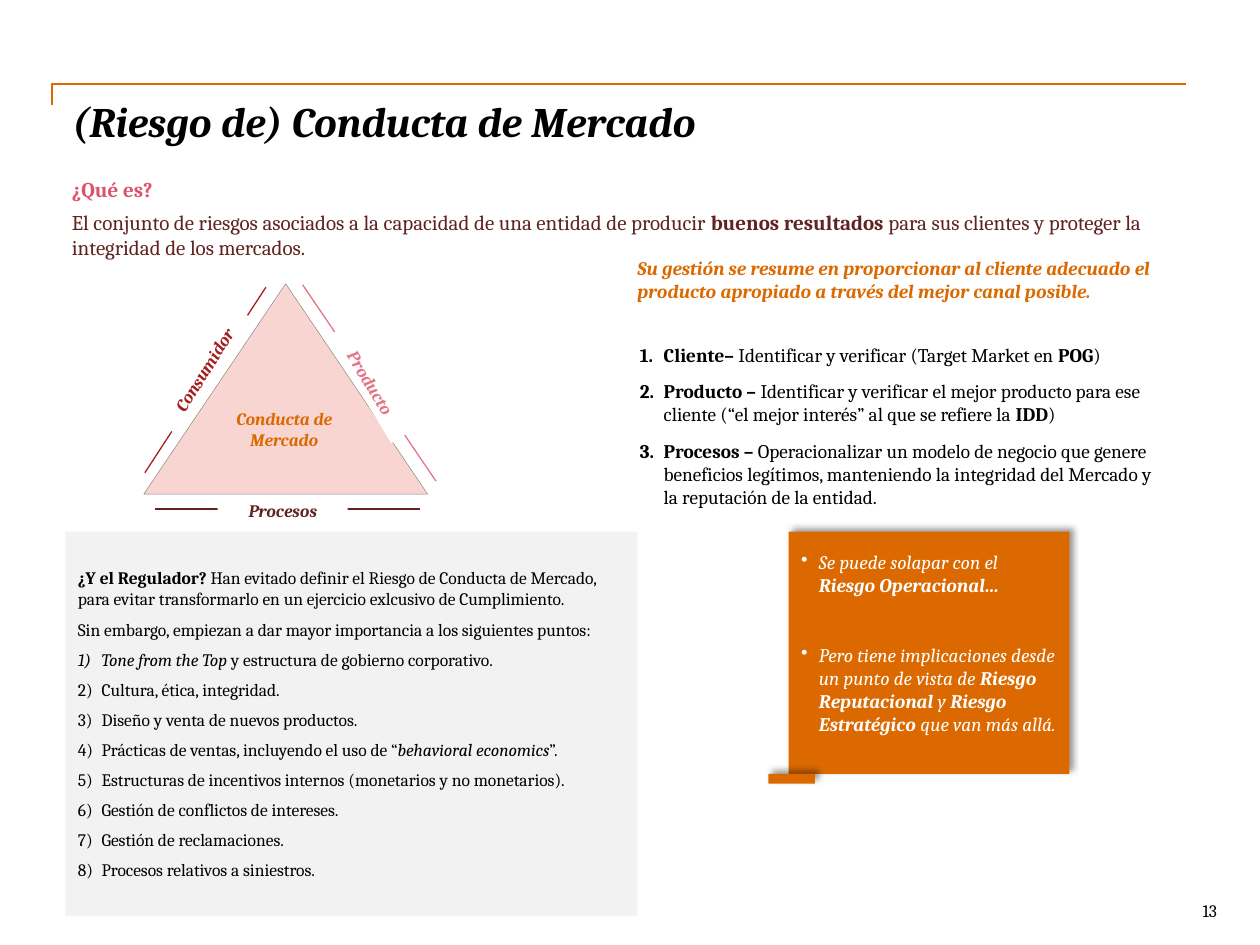
from lxml import etree
from pptx import Presentation
from pptx.dml.color import RGBColor
from pptx.enum.shapes import MSO_CONNECTOR, MSO_SHAPE
from pptx.enum.text import MSO_ANCHOR, PP_ALIGN
from pptx.oxml.ns import qn
from pptx.util import Cm, Pt

STRAIGHT, ELBOW = MSO_CONNECTOR.STRAIGHT, MSO_CONNECTOR.ELBOW
RECTANGLE, TRIANGLE = MSO_SHAPE.RECTANGLE, MSO_SHAPE.ISOSCELES_TRIANGLE
TOP, MIDDLE = MSO_ANCHOR.TOP, MSO_ANCHOR.MIDDLE
LEFT, CENTER, RIGHT = PP_ALIGN.LEFT, PP_ALIGN.CENTER, PP_ALIGN.RIGHT
FONT = "Cambria"
COLORS = {
    "orange": "DC6900", "black": "000000", "white": "FFFFFF", "grey": "808080",
    "panel": "F2F2F2", "blush": "F9D5D2", "brown": "602320", "pink": "E27588",
    "rose": "DB536A", "red": "A32020",
}
NUMBERING = {"1)": "arabicParenR", "1.": "arabicPeriod"}


def color(name):
    return RGBColor.from_string(COLORS[name])


def write(box, paras, size, ink, align=LEFT, anchor=TOP, margins=(0.25, 0.13, 0.25, 0.13),
          after=0, indent=0.48):
    frame = box.text_frame
    frame.word_wrap = True
    frame.vertical_anchor = anchor
    frame.margin_left, frame.margin_top, frame.margin_right, frame.margin_bottom = map(Cm, margins)
    for index, (marker, runs) in enumerate(paras):
        para = frame.paragraphs[0] if index == 0 else frame.add_paragraph()
        para.alignment = align
        para.space_after = Pt(after)
        for text, style in runs:
            span = para.add_run()
            span.text = text
            span.font.name = FONT
            span.font.size = Pt(size)
            span.font.bold = "b" in style
            span.font.italic = "i" in style
            span.font.color.rgb = color(ink)
        if marker:
            properties = para._p.get_or_add_pPr()
            properties.set("marL", str(Cm(indent)))
            properties.set("indent", str(-Cm(indent)))
            if marker in NUMBERING:
                etree.SubElement(properties, qn("a:buAutoNum"), type=NUMBERING[marker])
            else:
                etree.SubElement(properties, qn("a:buChar"), char=marker)


deck = Presentation()
deck.slide_width, deck.slide_height = Cm(25.4), Cm(19.05)
page = deck.slides.add_slide(deck.slide_layouts[6])
shapes = page.shapes

connectors = {}
for name, kind, ink, width, *ends in [
    ("frame", ELBOW, "orange", 1, 12.7, 13.34, 12.27, -9.52),
    ("Procesos", STRAIGHT, "brown", 0.75, 3.12, 10.26, 8.46, 10.26),
    ("Producto", STRAIGHT, "pink", 0.75, 6.1, 5.74, 8.79, 9.7),
    ("Consumidor", STRAIGHT, "red", 0.75, 2.92, 9.53, 5.36, 5.79),
]:
    connector = shapes.add_connector(kind, *map(Cm, ends))
    connector.line.color.rgb = color(ink)
    connector.line.width = Pt(width)
    etree.SubElement(connector._element.spPr, qn("a:effectLst"))
    connectors[name] = connector
frame_properties = connectors["frame"]._element.spPr
frame_properties.find(qn("a:xfrm")).set("rot", "5400000")
frame_properties.find(qn("a:prstGeom")).set("prst", "bentConnector2")

blocks = {}
for name, kind, fill, *place in [
    ("triangle", TRIANGLE, "blush", 2.9, 5.72, 5.72, 4.24),
    ("Procesos", RECTANGLE, "white", 4.39, 10.08, 2.62, 0.43),
    ("Producto", RECTANGLE, "white", 6.22, 7.44, 2.51, 0.56),
    ("Consumidor", RECTANGLE, "white", 2.72, 7.19, 2.79, 0.53),
    ("regulator", RECTANGLE, "panel", 1.32, 10.72, 11.53, 7.75),
    ("overlap", RECTANGLE, "orange", 15.9, 10.72, 5.66, 4.88),
    ("foot", RECTANGLE, "orange", 15.49, 15.6, 0.94, 0.2),
]:
    block = shapes.add_shape(kind, *map(Cm, place))
    block.shadow.inherit = False
    block.fill.solid()
    block.fill.fore_color.rgb = color(fill)
    block.line.fill.background()
    blocks[name] = block

blocks["triangle"].line.color.rgb = color("grey")
blocks["triangle"].line.width = Pt(0.25)

for name, ink, rotation in [("Procesos", "brown", 0), ("Producto", "pink", 58.8),
                            ("Consumidor", "red", 302.1)]:
    blocks[name].rotation = rotation
    write(blocks[name], [("", [(name, "bi")])], 10, ink, CENTER, MIDDLE, (0, 0, 0, 0))

for name in ("overlap", "foot"):
    effects = blocks[name]._element.spPr.find(qn("a:effectLst"))
    shadow = etree.SubElement(effects, qn("a:outerShdw"), blurRad=str(Pt(4)), dist=str(Pt(3)),
                              dir="18900000", algn="bl", rotWithShape="0")
    tint = etree.SubElement(shadow, qn("a:srgbClr"), val=COLORS["black"])
    etree.SubElement(tint, qn("a:alpha"), val="40000")

title = shapes.add_textbox(Cm(1.27), Cm(1.93), Cm(22.43), Cm(1.04))
write(title, [("", [("(Riesgo de) Conducta de Mercado", "bi")])], 24, "black",
      margins=(0.2, 0, 0, 0))

definition = shapes.add_textbox(Cm(1.27), Cm(3.48), Cm(22.43), Cm(1.83))
write(definition, [
    ("", [("¿Qué es?", "b")]),
    ("", [("El conjunto de riesgos asociados a la capacidad de una entidad de producir ", ""),
          ("buenos resultados ", "b"),
          ("para sus clientes y proteger la integridad de los mercados.", "")]),
], 12, "brown", anchor=MIDDLE, margins=(0.18, 0.18, 0.18, 0.18), after=4.5)
definition.text_frame.paragraphs[0].runs[0].font.color.rgb = color("rose")

summary = shapes.add_textbox(Cm(12.6), Cm(5.03), Cm(11.13), Cm(0.99))
write(summary, [("", [("Su gestión se resume en proporcionar al cliente adecuado el producto "
                       "apropiado a través del mejor canal posible.", "bi")])], 11, "orange")

core = shapes.add_textbox(Cm(4.5), Cm(8.08), Cm(2.46), Cm(1.12))
write(core, [("", [("Conducta de Mercado", "bi")])], 10, "orange", CENTER, MIDDLE, (0, 0, 0, 0))

write(blocks["regulator"], [
    ("", [("¿Y el Regulador? ", "b"),
          ("Han evitado definir el Riesgo de Conducta de Mercado, para evitar transformarlo "
           "en un ejercicio exlcusivo de Cumplimiento.", "")]),
    ("", [("Sin embargo, empiezan a dar mayor importancia a los siguientes puntos:", "")]),
    ("1)", [("Tone from the Top ", "i"), ("y estructura de gobierno corporativo.", "")]),
    ("1)", [("Cultura, ética, integridad.", "")]),
    ("1)", [("Diseño y venta de nuevos productos.", "")]),
    ("1)", [("Prácticas de ventas, incluyendo el uso de “", ""),
            ("behavioral economics", "i"), ("”.", "")]),
    ("1)", [("Estructuras de incentivos internos (monetarios y no monetarios).", "")]),
    ("1)", [("Gestión de conflictos de intereses.", "")]),
    ("1)", [("Gestión de reclamaciones.", "")]),
    ("1)", [("Procesos relativos a siniestros.", "")]),
], 10, "black", anchor=MIDDLE, after=5.2)

pillars = shapes.add_textbox(Cm(12.65), Cm(6.91), Cm(10.95), Cm(3.35))
write(pillars, [
    ("1.", [("Cliente– ", "b"), ("Identificar y verificar (Target Market en ", ""),
            ("POG", "b"), (")", "")]),
    ("1.", [("Producto – ", "b"),
            ("Identificar y verificar el mejor producto para ese cliente "
             "(“el mejor interés” al que se refiere la ", ""), ("IDD", "b"), (")", "")]),
    ("1.", [("Procesos – ", "b"),
            ("Operacionalizar un modelo de negocio que genere beneficios legítimos, "
             "manteniendo la integridad del Mercado y la reputación de la entidad.", "")]),
], 11, "black", anchor=MIDDLE, after=7.5)

write(blocks["overlap"], [
    ("•", [("Se puede solapar con el ", "i"), ("Riesgo Operacional…", "bi")]),
    ("•", [("Pero tiene implicaciones desde un punto de vista de ", "i"),
           ("Riesgo Reputacional ", "bi"), ("y ", "i"), ("Riesgo Estratégico ", "bi"),
           ("que van más allá.", "i")]),
], 11, "white", anchor=MIDDLE, margins=(0.25, 0.13, 0.25, 0.53), indent=0.36)
blocks["overlap"].text_frame.paragraphs[1].space_before = Pt(26.6)

number = shapes.add_textbox(Cm(20.29), Cm(18.14), Cm(4.24), Cm(0.3))
write(number, [("", [("13", "")])], 10, "black", RIGHT, margins=(0, 0, 0, 0))

deck.save("out.pptx")
